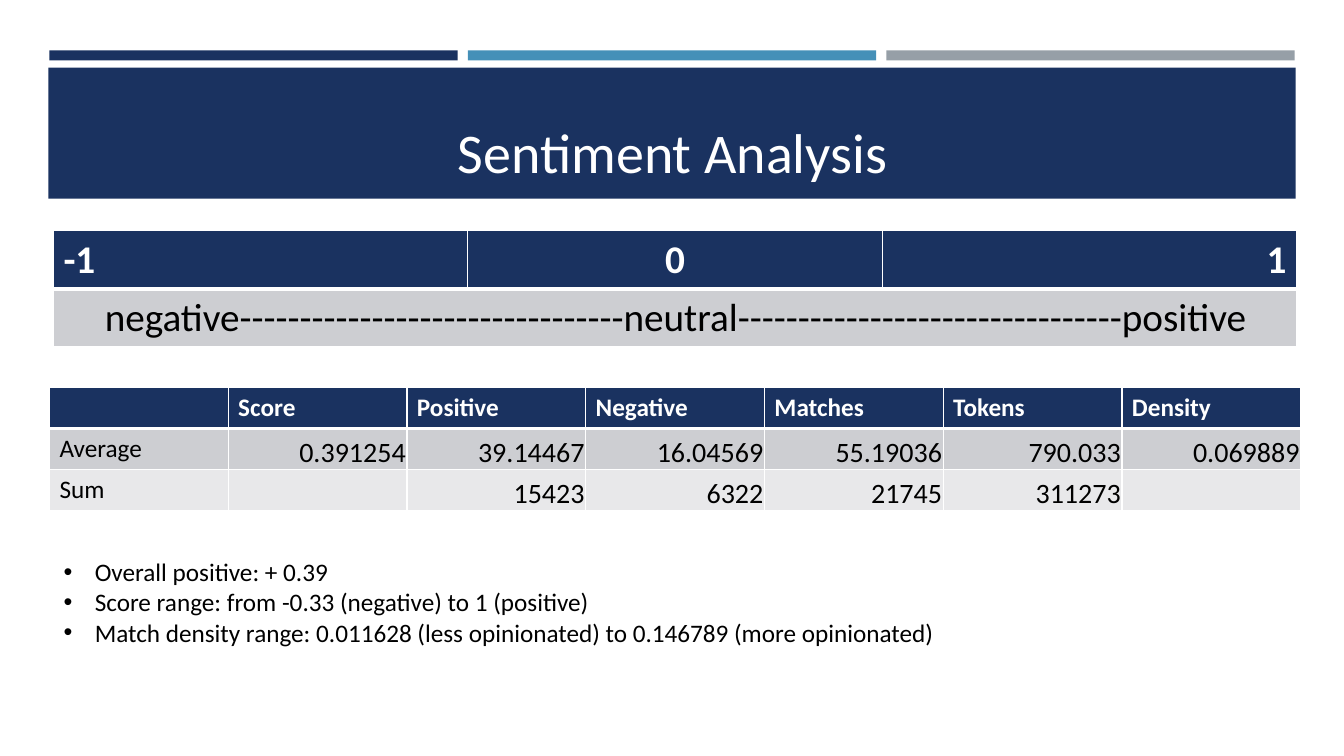
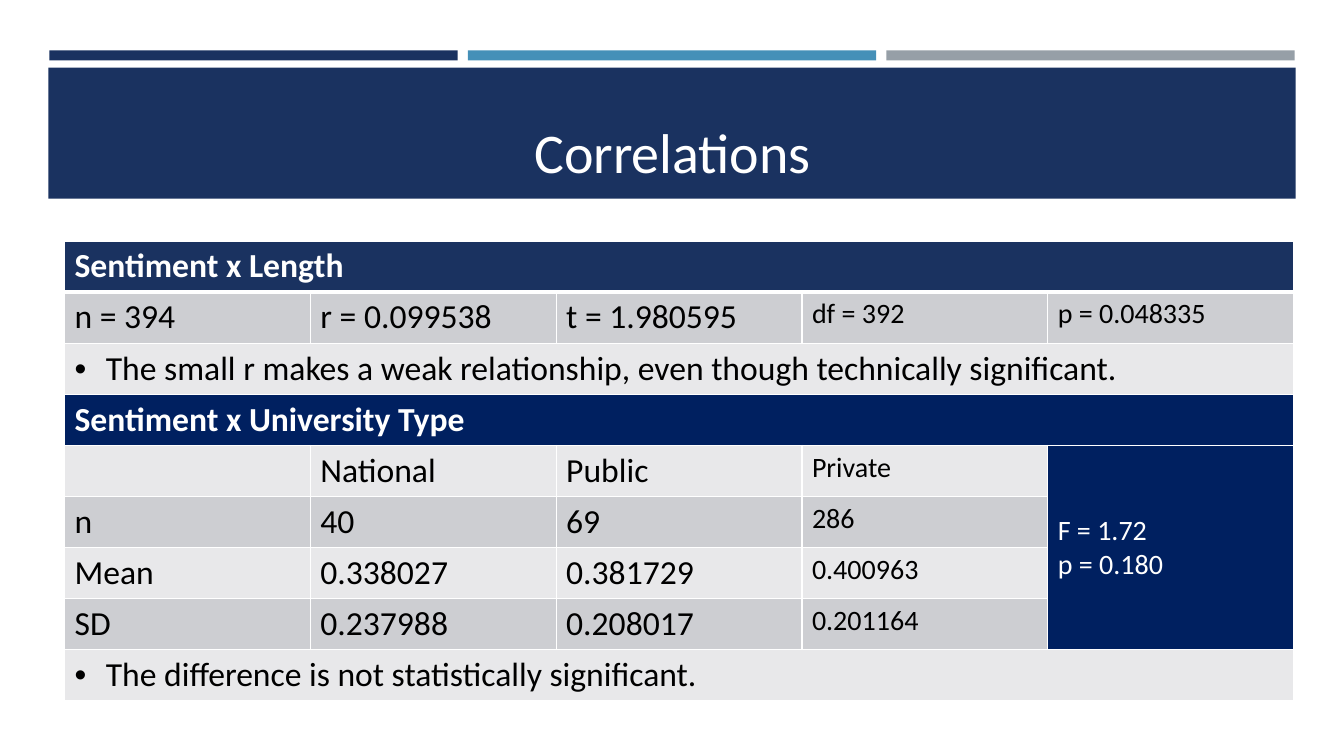
from lxml.etree import SubElement
from pptx import Presentation
from pptx.dml.color import RGBColor
from pptx.enum.shapes import MSO_SHAPE as Preset
from pptx.enum.text import MSO_ANCHOR as Anchor, MSO_AUTO_SIZE as AutoSize, PP_ALIGN as Align
from pptx.oxml.ns import qn
from pptx.util import Inches, Pt

FONT = "Calibri"
NAVY, DEEP_NAVY, BLUE, GREY = "1A3260", "002060", "4590B8", "969FA7"
DARK_ROW, LIGHT_ROW = "CDCED2", "E8E8EA"
WHITE, BLACK = "FFFFFF", "000000"
TITLE_ONLY, TITLE_AND_BODY = 5, 1


def rgb(value):
    return RGBColor.from_string(value)


class Deck:
    """Holds the shared style and the slide being built."""

    def __init__(self):
        self.prs = Presentation()
        self.prs.slide_width = Inches(13.33)
        self.prs.slide_height = Inches(7.5)
        self.slide = None

    def new_slide(self, title, layout):
        self.slide = self.prs.slides.add_slide(self.prs.slide_layouts[layout])
        if len(self.prs.slides) == 1:
            self.master_bands()
        heading = self.slide.shapes.title
        self.place(heading, 0.64, 0.77, 12.06, 1.11)
        heading.text_frame.text = title
        heading.text_frame.vertical_anchor = Anchor.BOTTOM
        self.format(heading.text_frame, 40, WHITE, align=Align.CENTER)

    def master_bands(self):
        bands = [(0.49 + 4.15 * i, 0.5, 4.05, 0.1, color)
                 for i, color in enumerate((NAVY, BLUE, GREY))]
        bands.append((0.48, 0.67, 12.37, 1.3, NAVY))
        master_tree = self.prs.slide_master.shapes.element
        for i, (left, top, width, height, color) in enumerate(bands):
            band = self.slide.shapes.add_shape(
                Preset.RECTANGLE, Inches(left), Inches(top), Inches(width), Inches(height))
            band.shadow.inherit = False
            band.fill.solid()
            band.fill.fore_color.rgb = rgb(color)
            band.line.fill.background()
            band.element.nvSpPr.cNvPr.set("id", str(100 + i))
            master_tree.insert(2 + i, band.element)

    def place(self, shape, left, top, width, height):
        shape.left, shape.top = Inches(left), Inches(top)
        shape.width, shape.height = Inches(width), Inches(height)

    def format(self, frame, size, color, bold=False, align=Align.LEFT, bullet=False):
        for paragraph in frame.paragraphs:
            paragraph.alignment = align
            paragraph.space_before = Pt(0)
            if bullet:
                self.bullet(paragraph)
            for run in paragraph.runs:
                run.font.name, run.font.size, run.font.bold = FONT, Pt(size), bold
                run.font.color.rgb = rgb(color)

    def bullet(self, paragraph):
        props = paragraph._p.get_or_add_pPr()
        props.set("marL", str(Inches(0.31)))
        props.set("indent", str(-Inches(0.31)))
        SubElement(props, qn("a:buFont"), typeface="Arial")
        SubElement(props, qn("a:buChar"), char="•")

    def body_list(self, items, left, top, width, height):
        body = self.slide.placeholders[1]
        self.place(body, left, top, width, height)
        body.text_frame.text = "\n".join(items)
        body.text_frame.word_wrap = True
        body.text_frame.auto_size = AutoSize.NONE
        self.format(body.text_frame, 18, BLACK, bullet=True)

    def table(self, rows, fills, left, top, width, row_height):
        table = self.slide.shapes.add_table(
            len(rows), len(rows[0]), Inches(left), Inches(top),
            Inches(width), Inches(row_height * len(rows))).table
        table.first_row = table.horz_banding = False
        for r, (texts, fill) in enumerate(zip(rows, fills)):
            for c, text in enumerate(texts):
                cell = table.cell(r, c)
                cell.text_frame.text = text
                self.fill_cell(cell, fill)
                self.borders(cell, top=3 if r == 1 else 1, bottom=3 if r == 0 else 1)
        return table

    def fill_cell(self, cell, color):
        cell.fill.solid()
        cell.fill.fore_color.rgb = rgb(color)

    def borders(self, cell, top, bottom):
        props = cell._tc.get_or_add_tcPr()
        for i, (side, weight) in enumerate(zip("LRTB", (1, 1, top, bottom))):
            line = SubElement(props, qn(f"a:ln{side}"), w=str(Pt(weight)))
            SubElement(SubElement(line, qn("a:solidFill")), qn("a:srgbClr"), val=WHITE)
            props.insert(i, line)

    def tighten(self, cell):
        cell.margin_left = cell.margin_right = cell.margin_top = Inches(0.01)
        cell.margin_bottom = 0
        cell.vertical_anchor = Anchor.BOTTOM


def sentiment_slide(deck):
    deck.new_slide("Sentiment Analysis", TITLE_AND_BODY)

    dashes = "-" * 32
    scale_rows = [["-1", "0", "1"], [f"negative{dashes}neutral{dashes}positive", "", ""]]
    scale = deck.table(scale_rows, [NAVY, DARK_ROW], 0.53, 2.29, 12.33, 0.56)
    for c, align in enumerate((Align.LEFT, Align.CENTER, Align.RIGHT)):
        deck.format(scale.cell(0, c).text_frame, 28, WHITE, bold=True, align=align)
    scale.cell(1, 0).merge(scale.cell(1, 2))
    deck.format(scale.cell(1, 0).text_frame, 28, BLACK, align=Align.CENTER)

    score_rows = [
        ["", "Score", "Positive", "Negative", "Matches", "Tokens", "Density"],
        ["Average", "0.391254", "39.14467", "16.04569", "55.19036", "790.033", "0.069889"],
        ["Sum", "", "15423", "6322", "21745", "311273", ""],
    ]
    scores = deck.table(score_rows, [NAVY, DARK_ROW, LIGHT_ROW], 0.49, 3.84, 12.41, 0.41)
    for r, texts in enumerate(score_rows):
        for c in range(len(texts)):
            cell = scores.cell(r, c)
            if r == 0:
                deck.format(cell.text_frame, 18, WHITE, bold=True)
            elif c == 0:
                deck.format(cell.text_frame, 18, BLACK)
            else:
                deck.tighten(cell)
                deck.format(cell.text_frame, 20, BLACK, align=Align.RIGHT)

    deck.body_list([
        "Overall positive: + 0.39",
        "Score range: from -0.33 (negative) to 1 (positive)",
        "Match density range: 0.011628 (less opinionated) to 0.146789 (more opinionated)",
    ], 0.53, 5.47, 12.41, 1.01)


def correlations_slide(deck):
    deck.new_slide("Correlations", TITLE_ONLY)
    blanks = [""] * 4
    rows = [
        ["Sentiment x Length", *blanks],
        ["n = 394", "r = 0.099538", "t = 1.980595", "df = 392", "p = 0.048335"],
        ["The small r makes a weak relationship, even though technically significant.", *blanks],
        ["Sentiment x University Type", *blanks],
        ["", "National", "Public", "Private", "F = 1.72\np = 0.180"],
        ["n", "40", "69", "286", ""],
        ["Mean", "0.338027", "0.381729", "0.400963", ""],
        ["SD", "0.237988", "0.208017", "0.201164", ""],
        ["The difference is not statistically significant.", *blanks],
    ]
    fills = [NAVY, DARK_ROW, LIGHT_ROW, DEEP_NAVY, LIGHT_ROW,
             DARK_ROW, LIGHT_ROW, DARK_ROW, LIGHT_ROW]
    headers, findings = (0, 3), (2, 8)
    results = deck.table(rows, fills, 0.64, 2.39, 12.19, 0.506)
    for r, texts in enumerate(rows):
        for c in range(len(texts)):
            deck.format(results.cell(r, c).text_frame, 24 if c < 3 else 20,
                        WHITE if r in headers else BLACK,
                        bold=r in headers, bullet=r in findings and c == 0)
    for r in headers + findings:
        results.cell(r, 0).merge(results.cell(r, 4))

    for r in range(4, 8):
        deck.fill_cell(results.cell(r, 4), DEEP_NAVY)
    f_test = results.cell(4, 4)
    f_test.merge(results.cell(7, 4))
    f_test.vertical_anchor = Anchor.MIDDLE
    deck.format(f_test.text_frame, 20, WHITE)


def main():
    deck = Deck()
    sentiment_slide(deck)
    correlations_slide(deck)
    deck.prs.save("out.pptx")


if __name__ == "__main__":
    main()
